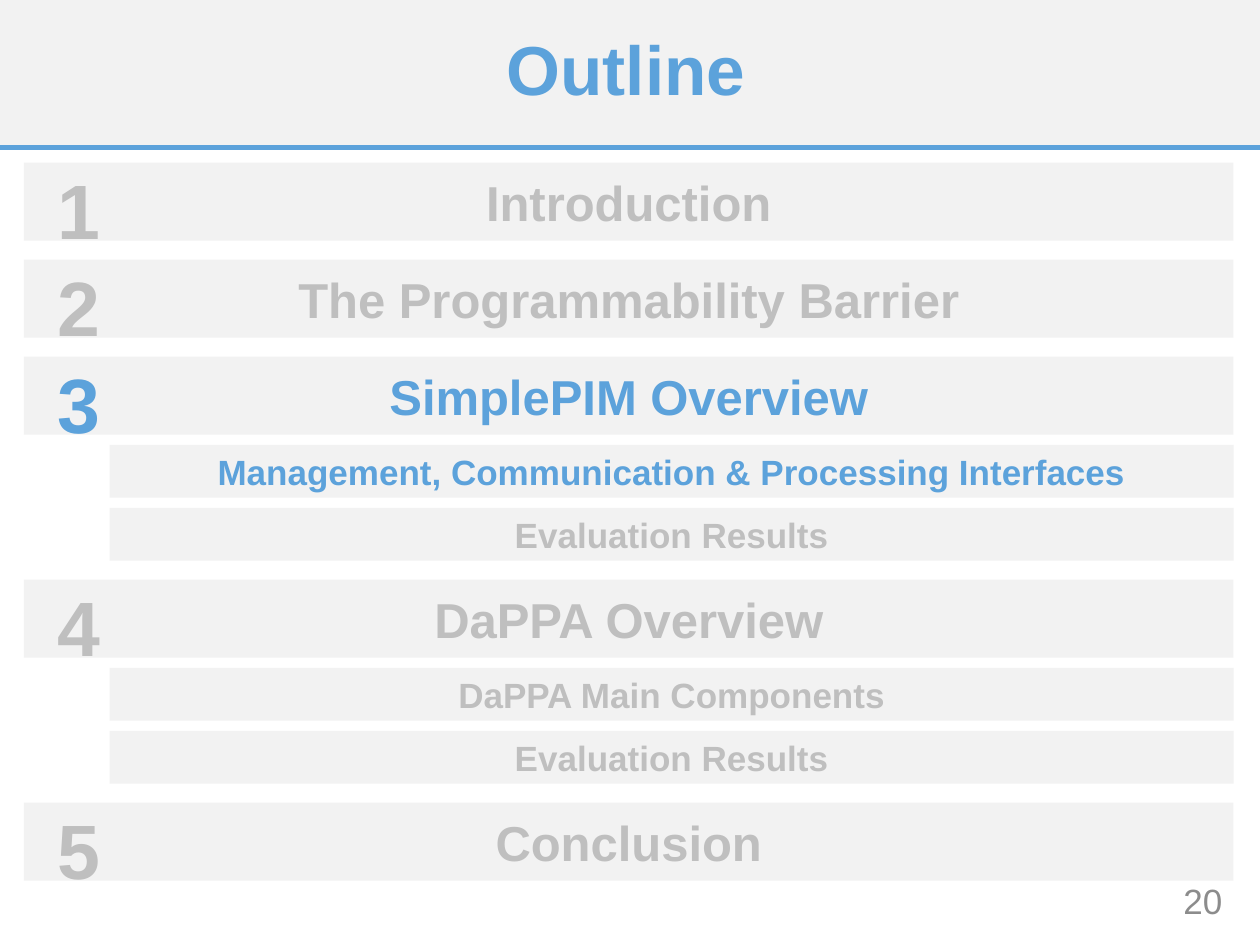
"""Build the outline slide with its numbered sections and sub-topics."""
import pptx
import pptx.dml.color
import pptx.enum.shapes
import pptx.enum.text
import pptx.oxml
import pptx.util

COLORS = {"panel": "F2F2F2", "accent": "5CA2DB", "muted": "BFBFBF", "page": "8C8C8C"}
INCH = pptx.util.Inches
ALIGN = pptx.enum.text.PP_ALIGN
ANCHOR = pptx.enum.text.MSO_ANCHOR
SHAPES = pptx.enum.shapes

prs = pptx.Presentation()
prs.slide_width, prs.slide_height = INCH(10), INCH(7.5)
s = prs.slides.add_slide(prs.slide_layouts[6])


def add_text(text, box, size, color, bold=True, fill=False, align=ALIGN.CENTER,
             anchor=ANCHOR.MIDDLE, inset=0.05, spacing=1.0):
    box = [INCH(v) for v in box]
    if fill:
        sp = s.shapes.add_shape(SHAPES.MSO_SHAPE.RECTANGLE, *box)
        sp.shadow.inherit = False
        sp.fill.solid()
        sp.fill.fore_color.rgb = pptx.dml.color.RGBColor.from_string(COLORS["panel"])
        sp.line.fill.background()
    else:
        sp = s.shapes.add_textbox(*box)
    if text:
        tf = sp.text_frame
        tf.word_wrap = True
        tf.vertical_anchor = anchor
        tf.margin_top = tf.margin_bottom = INCH(inset)
        p = tf.paragraphs[0]
        p.alignment, p.line_spacing = align, spacing
        r = p.add_run()
        r.text = text
        r.font.name, r.font.size, r.font.bold = "Arial", pptx.util.Pt(size), bold
        r.font.color.rgb = pptx.dml.color.RGBColor.from_string(COLORS[color])


header_h = 1.17
add_text("", (0, 0, 10, header_h), 20, "muted", fill=True)
add_text("20", (8.72, 6.95, 1.08, 0.4), 20, "page", bold=False, align=ALIGN.RIGHT)
rule = s.shapes.add_connector(SHAPES.MSO_CONNECTOR.STRAIGHT,
                              0, INCH(header_h), prs.slide_width, INCH(header_h))
rule.line.width = pptx.util.Pt(3)
rule.line.color.rgb = pptx.dml.color.RGBColor.from_string(COLORS["accent"])
effects = '<a:effectLst xmlns:a="http://schemas.openxmlformats.org/drawingml/2006/main"/>'
rule._element.spPr.append(pptx.oxml.parse_xml(effects))
add_text("Outline ", (0.18, 0.25, 9.73, 0.66), 39.6, "accent", spacing=0.9)

sections = [
    ("Introduction", []),
    ("The Programmability Barrier", []),
    ("SimplePIM Overview",
     ["Management, Communication & Processing Interfaces", "Evaluation Results"]),
    ("DaPPA Overview", ["DaPPA Main Components", "Evaluation Results"]),
    ("Conclusion", []),
]
active = {"SimplePIM Overview", "Management, Communication & Processing Interfaces"}
left, sub_left, right, number_w = 0.19, 0.87, 9.79, 0.88
row_h, sub_h, gap, sub_gap = 0.62, 0.42, 0.15, 0.08

top = 1.29
for number, (heading, topics) in enumerate(sections, start=1):
    color = "accent" if heading in active else "muted"
    add_text(heading, (left, top, right - left, row_h), 28, color, fill=True)
    add_text(str(number), (left, top, number_w, row_h), 44, color,
             anchor=ANCHOR.TOP, inset=0)
    top += row_h
    for topic in topics:
        top += sub_gap
        add_text(topic, (sub_left, top, right - sub_left, sub_h), 20,
                 "accent" if topic in active else "muted", fill=True)
        top += sub_h
    top += gap

prs.save("out.pptx")
